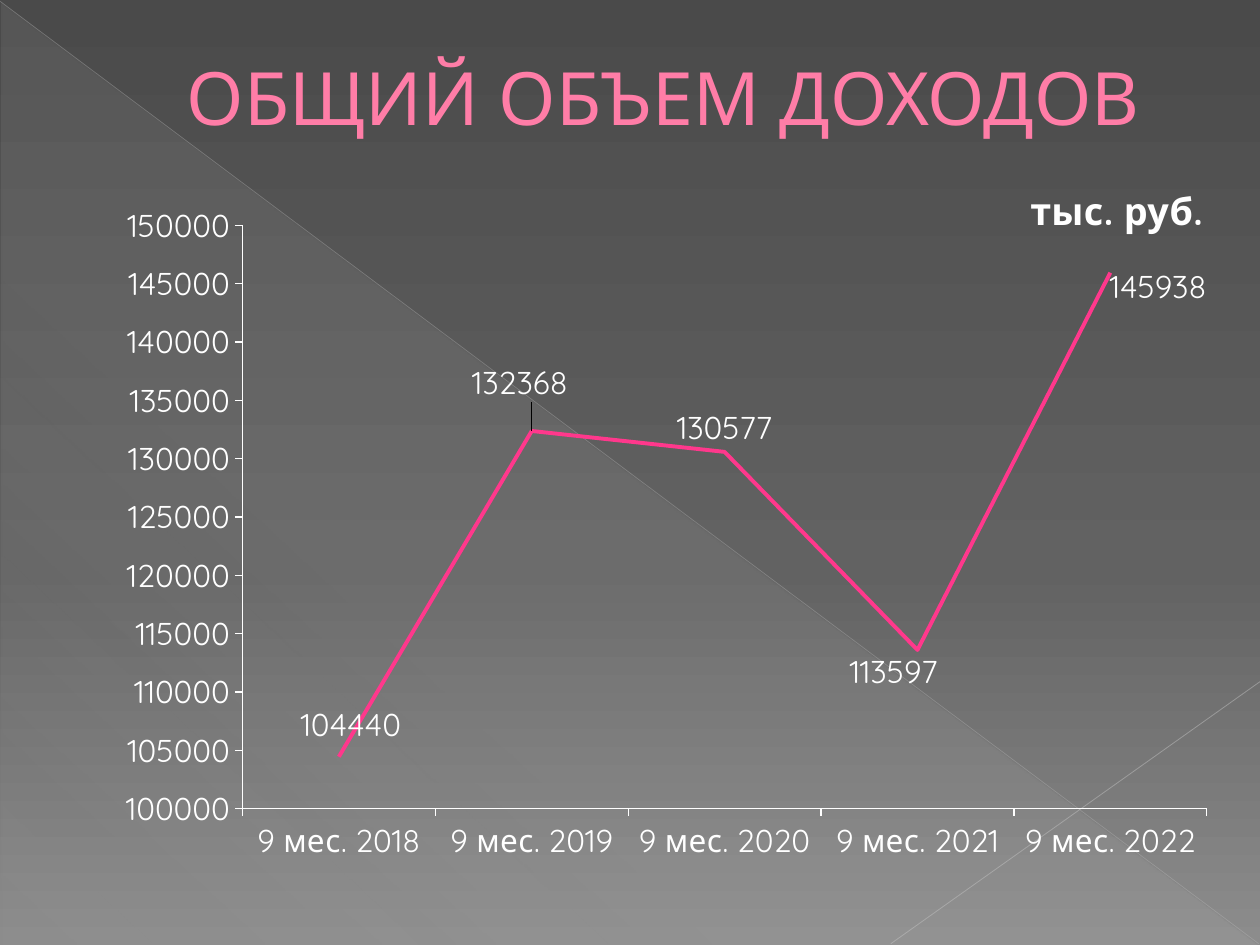
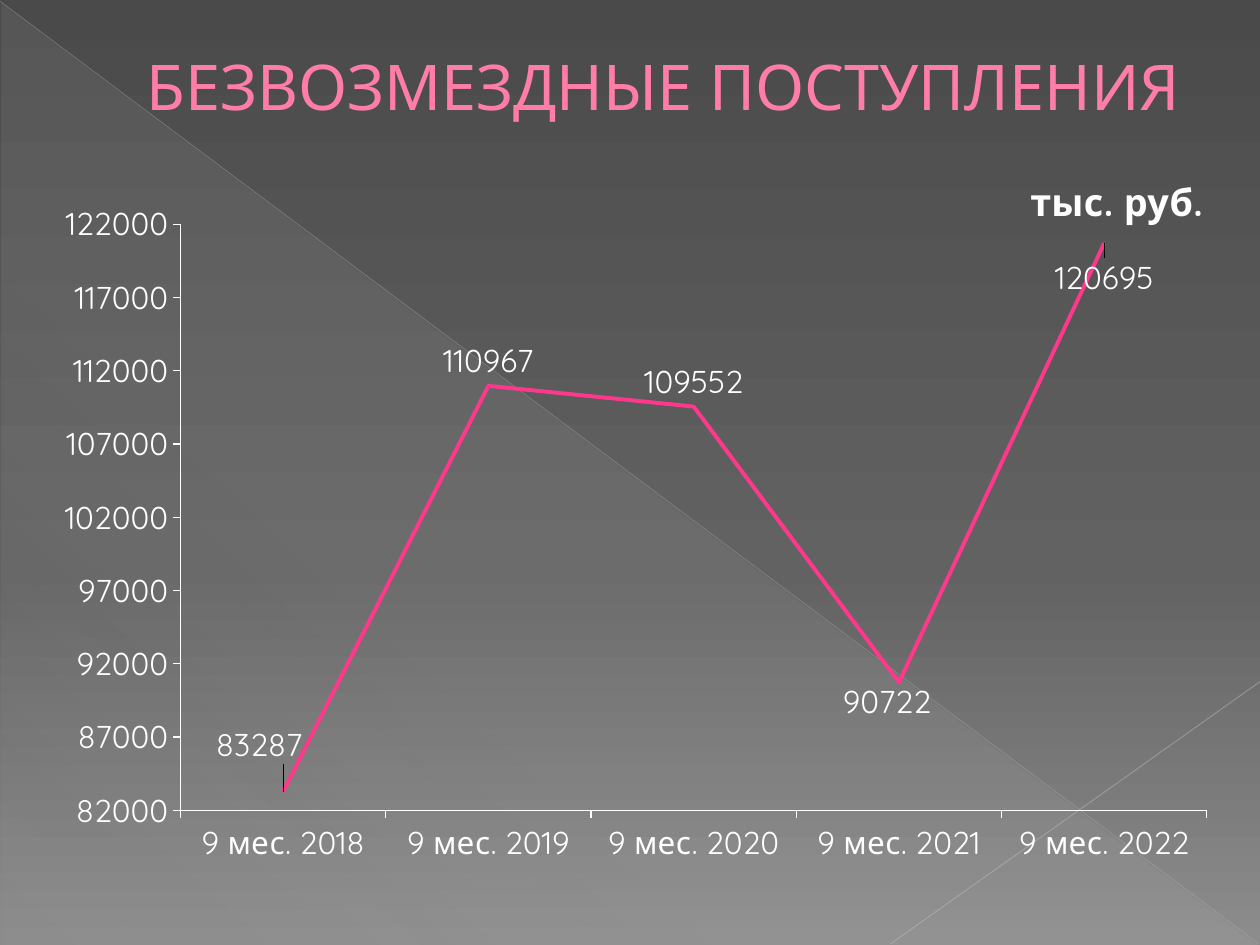
"""Build two income slides with line charts on a shared grey gradient design."""
from lxml import etree
from pptx import Presentation
from pptx import util as u
from pptx.chart.data import CategoryChartData
from pptx.dml.color import RGBColor
from pptx.enum import chart as charts, shapes, text
from pptx.oxml.ns import qn

FONT = "Quicksand"
WHITE, PINK, TITLE_PINK, SILVER = "FFFFFF", "FF388C", "FF7DA7", "D2D2D2"
BACKGROUND = [(0, "4A4A4A", 100), (60, "626262", 100), (100, "8C8C8C", 100)]
TRIANGLE = [(0, SILVER, 10), (70, SILVER, 8), (100, SILVER, 1)]
RULES = [
    ((0, 0.01, 9.99, 7.49), "BFBFBF", 0.39, 35),
    ((10, 5.41, 7.07, 7.49), "C6C6C6", 0.47, 45),
]
PERIODS = [f"9 мес. {year}" for year in range(2018, 2023)]
SLIDES = [
    {
        "title": "ОБЩИЙ ОБЪЕМ ДОХОДОВ", "size": 42, "title_height": 0.94,
        "chart_height": 6.14, "values": (104440, 132368, 130577, 113597, 145938),
        "range": (100000, 150000), "plot": (0.174, 0.104, 0.81, 0.754),
        "unit_at": (0.83, 0.04),
        "shifts": {0: (0.01, -0.01), 1: (-0.01, -0.03), 3: (-0.02, 0.06), 4: (0.04, 0.05)},
    },
    {
        "title": "БЕЗВОЗМЕЗДНЫЕ ПОСТУПЛЕНИЯ", "size": 36, "title_height": 0.78,
        "chart_height": 5.83, "values": (83287, 110967, 109552, 90722, 120695),
        "range": (82000, 122000), "plot": (0.122, 0.108, 0.862, 0.798),
        "unit_at": (0.83, 0.03),
        "shifts": {0: (-0.02, -0.03), 3: (-0.01, 0.06), 4: (0, 0.08)},
    },
]


def shade(fill, element, angle, stops):
    fill.gradient()
    fill.gradient_angle = 360 - angle
    stop_list = element.find(".//" + qn("a:gsLst"))
    for old in list(stop_list):
        stop_list.remove(old)
    for position, color, opacity in stops:
        stop = etree.SubElement(stop_list, qn("a:gs"), pos=str(position * 1000))
        tint = etree.SubElement(stop, qn("a:srgbClr"), val=color)
        etree.SubElement(tint, qn("a:alpha"), val=str(opacity * 1000))


def place(parent, index, settings):
    for old in parent.findall(qn("c:layout")):
        parent.remove(old)
    layout = etree.Element(qn("c:layout"))
    manual = etree.SubElement(layout, qn("c:manualLayout"))
    for name, value in settings.items():
        etree.SubElement(manual, qn("c:" + name), val=str(value))
    parent.insert(index, layout)


deck = Presentation()
deck.slide_width, deck.slide_height = u.Inches(10), u.Inches(7.5)

for content in SLIDES:
    page = deck.slides.add_slide(deck.slide_layouts[6])
    shade(page.background.fill, page.element, 90, BACKGROUND)

    triangle = page.shapes.add_shape(
        shapes.MSO_SHAPE.RIGHT_TRIANGLE, *map(u.Inches, (0.01, 0.02, 9.98, 7.48)))
    triangle.shadow.inherit = False
    triangle.line.fill.background()
    shade(triangle.fill, triangle.element, 133, TRIANGLE)

    for ends, color, width, opacity in RULES:
        rule = page.shapes.add_connector(
            shapes.MSO_CONNECTOR.STRAIGHT, *map(u.Inches, ends))
        rule.line.color.rgb = RGBColor.from_string(color)
        rule.line.width = u.Pt(width)
        tint = rule.element.find(".//" + qn("a:srgbClr"))
        etree.SubElement(tint, qn("a:alpha"), val=str(opacity * 1000))
        etree.SubElement(rule.element.spPr, qn("a:effectLst"))

    box = page.shapes.add_textbox(
        *map(u.Inches, (0.5, 0.29, 9, content["title_height"])))
    frame = box.text_frame
    frame.word_wrap = True
    frame.vertical_anchor = text.MSO_ANCHOR.MIDDLE
    para = frame.paragraphs[0]
    para.alignment = text.PP_ALIGN.CENTER
    para._p.get_or_add_pPr().set("marL", str(u.Inches(0.53)))
    span = para.add_run()
    span.text = content["title"]
    for name, value in {"name": FONT, "size": u.Pt(content["size"])}.items():
        setattr(span.font, name, value)
    span.font.color.rgb = RGBColor.from_string(TITLE_PINK)

    data = CategoryChartData()
    data.categories = PERIODS
    data.add_series("Series 1", content["values"])
    chart = page.shapes.add_chart(
        charts.XL_CHART_TYPE.LINE,
        *map(u.Inches, (0.28, 1.15, 9.45, content["chart_height"])), data).chart
    chart.has_legend = False
    chart.has_title = True
    span = chart.chart_title.text_frame.paragraphs[0].add_run()
    span.text = "тыс. руб."
    for font, size, bold in ((chart.font, 18, False), (span.font, 21.6, True)):
        for name, value in {"name": FONT, "size": u.Pt(size), "bold": bold}.items():
            setattr(font, name, value)
        font.color.rgb = RGBColor.from_string(WHITE)

    for axis in (chart.category_axis, chart.value_axis):
        axis.has_major_gridlines = False
        axis.major_tick_mark = charts.XL_TICK_MARK.OUTSIDE
        axis.minor_tick_mark = charts.XL_TICK_MARK.NONE
        axis.format.line.color.rgb = RGBColor.from_string(WHITE)
        axis.format.line.width = u.Pt(0.75)
    low, high = content["range"]
    scale = {"minimum_scale": low, "maximum_scale": high, "major_unit": 5000}
    for name, value in scale.items():
        setattr(chart.value_axis, name, value)

    plot = chart.plots[0]
    plot.vary_by_categories = False
    series = plot.series[0]
    series.smooth = False
    series.marker.style = charts.XL_MARKER_STYLE.NONE
    series.format.line.color.rgb = RGBColor.from_string(PINK)
    series.format.line.width = u.Pt(2.25)
    labels = series.data_labels
    labels.show_value = True
    labels.position = charts.XL_LABEL_POSITION.ABOVE
    for index in content["shifts"]:
        label = series.points[index].data_label
        label.position = charts.XL_LABEL_POSITION.ABOVE
        for name, value in {"name": FONT, "size": u.Pt(18), "bold": False}.items():
            setattr(label.font, name, value)
        label.font.color.rgb = RGBColor.from_string(WHITE)
    moved = chart.element.iter(qn("c:dLbl"))
    for label, (x, y) in zip(list(moved), content["shifts"].values()):
        place(label, 1, {"x": x, "y": y})

    edges = {"xMode": "edge", "yMode": "edge"}
    place(chart.chart_title.element, 1, edges | dict(zip("xy", content["unit_at"])))
    place(chart.element.find(".//" + qn("c:plotArea")), 0,
          {"layoutTarget": "inner"} | edges | dict(zip("xywh", content["plot"])))

deck.save("out.pptx")
